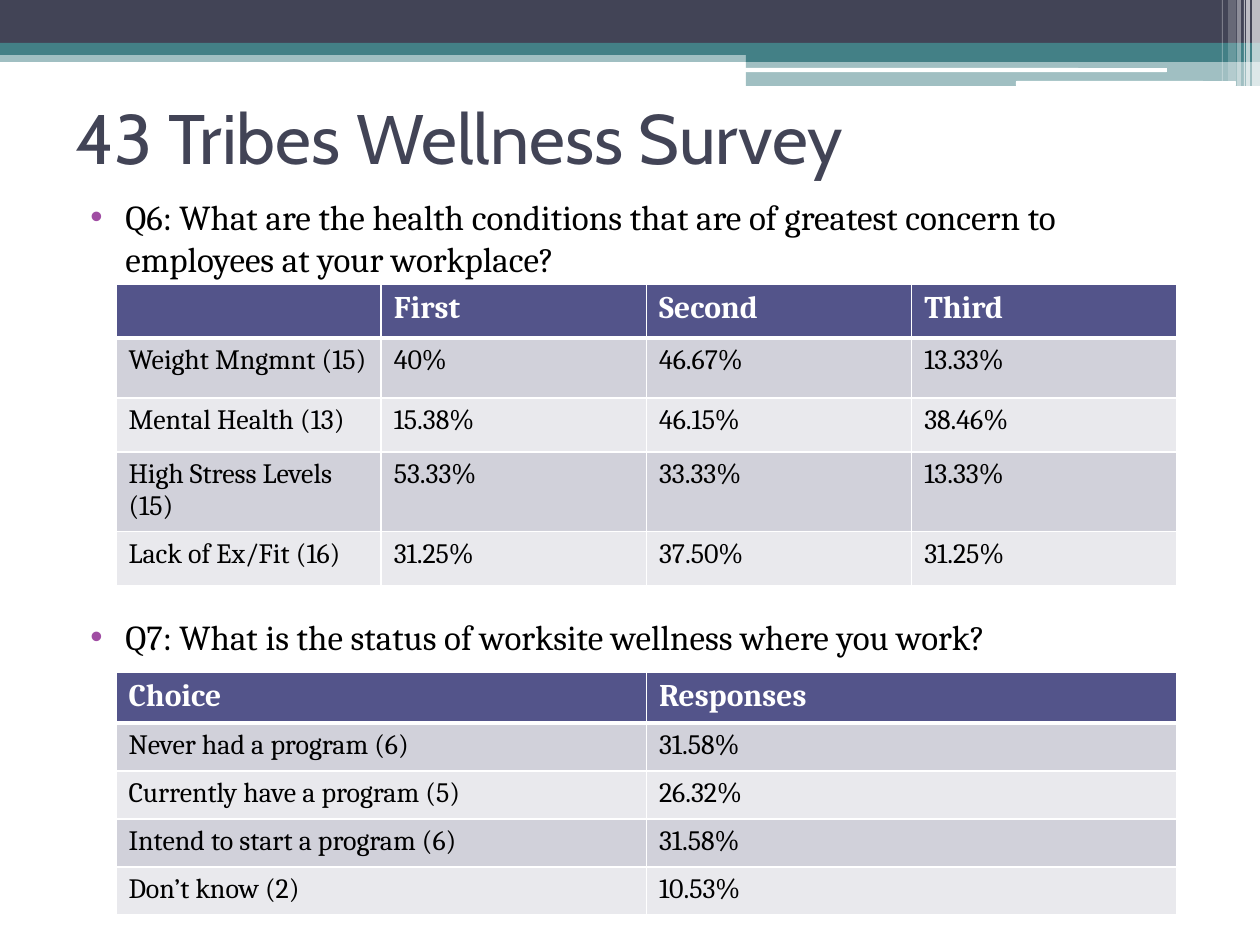
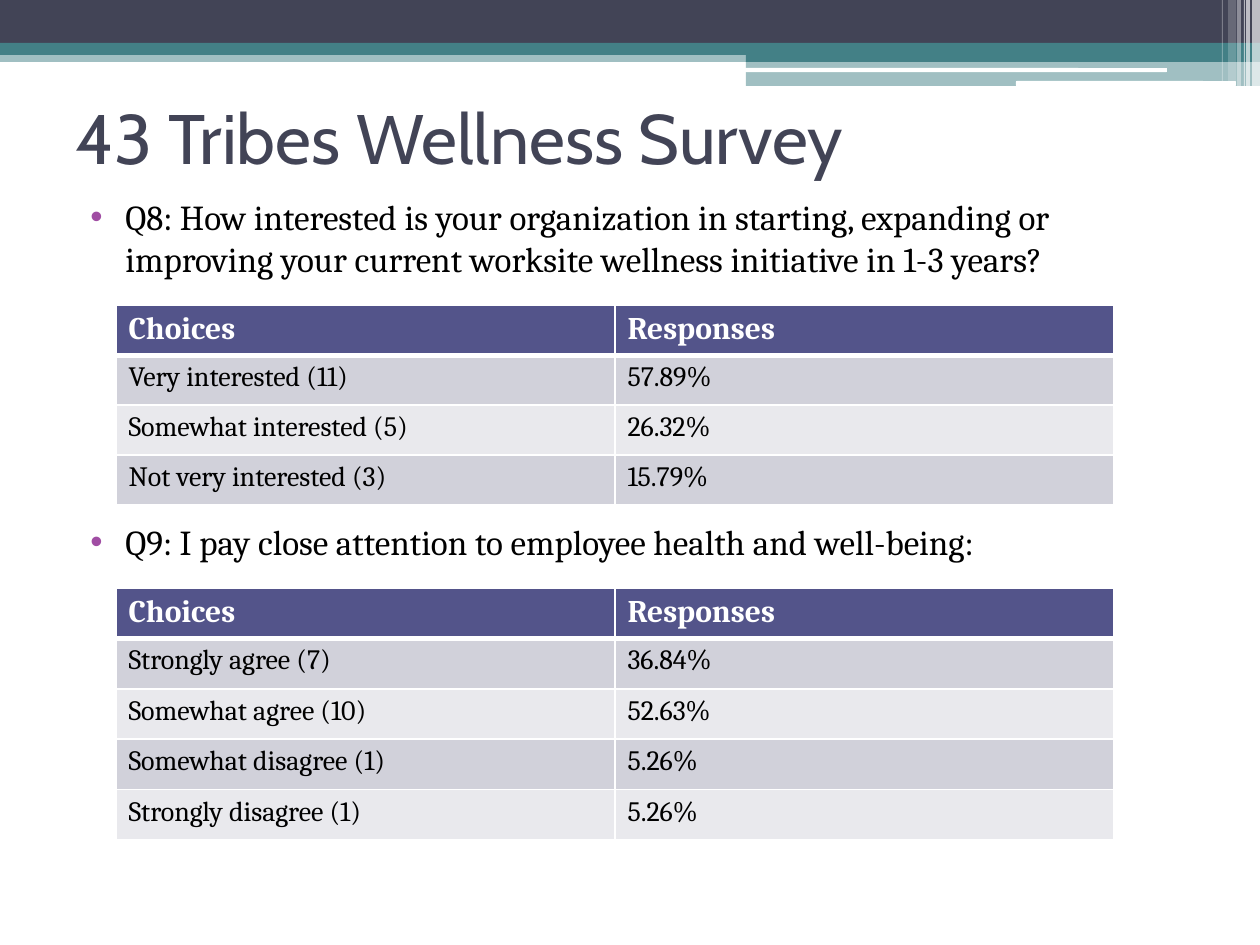
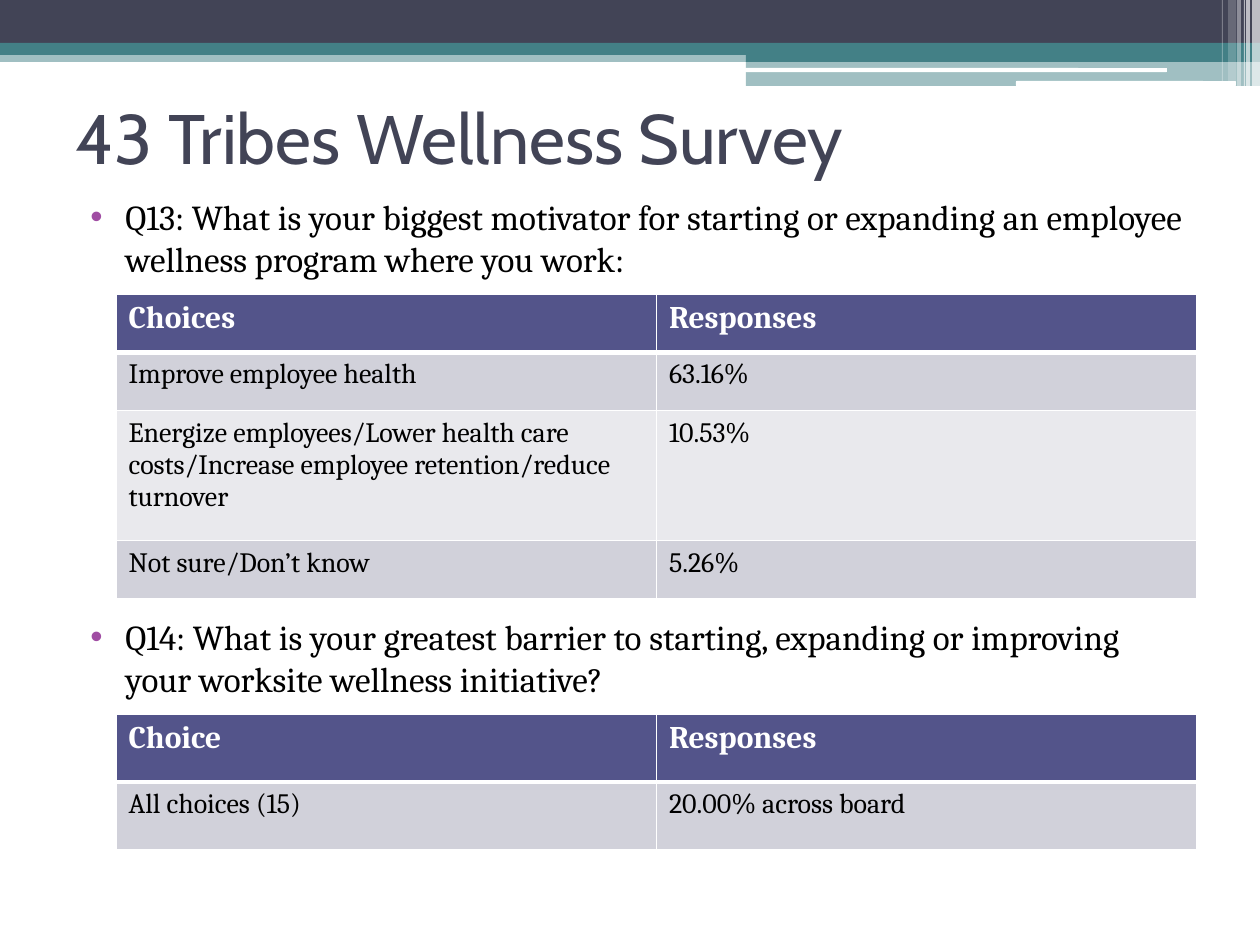
import pptx
import pptx.dml.color
import pptx.enum.shapes
import pptx.enum.text
import pptx.oxml
import pptx.oxml.ns
import pptx.util
from dataclasses import dataclass

PX = 914400 / 126
qn = pptx.oxml.ns.qn
SHAPE = pptx.enum.shapes.MSO_SHAPE
ANCHOR = pptx.enum.text.MSO_ANCHOR


@dataclass(frozen=True)
class Theme:
    title_font: str = "Cabin"
    body_font: str = "Cambria"
    title_size: int = 40
    question_size: int = 20
    header_size: int = 18
    cell_size: int = 16
    ink: str = "424456"
    teal: str = "438086"
    bullet: str = "A04DA3"
    header: str = "53548A"
    stripes: tuple = ("D1D1DA", "E9E9ED")
    white: str = "FFFFFF"
    black: str = "000000"


T = Theme()

# Content: "gap" is the space in points above the second question;
# "tall" gives row heights in px, the other rows share what is left
TITLE = "43 Tribes Wellness Survey"
SLIDES = [
    {
        "questions": [
            "Q6: What are the health conditions that are of greatest concern to employees at your workplace?",
            "Q7: What is the status of worksite wellness where you work?",
        ],
        "gap": 192, "body_height": 596, "table_width": 1061,
        "tables": [
            {"top": 284, "height": 299, "tall": {1: 60, 3: 77}, "rows": [
                ("", "First", "Second", "Third"),
                ("Weight Mngmnt (15)", "40%", "46.67%", "13.33%"),
                ("Mental Health (13)", "15.38%", "46.15%", "38.46%"),
                ("High Stress Levels (15)", "53.33%", "33.33%", "13.33%"),
                ("Lack of Ex/Fit (16)", "31.25%", "37.50%", "31.25%"),
            ]},
            {"top": 672, "height": 243, "tall": {0: 51}, "rows": [
                ("Choice", "Responses"),
                ("Never had a program (6)", "31.58%"),
                ("Currently have a program (5)", "26.32%"),
                ("Intend to start a program (6)", "31.58%"),
                ("Don’t know (2)", "10.53%"),
            ]},
        ],
    },
    {
        "questions": [
            "Q8: How interested is your organization in starting, expanding or improving your current worksite wellness initiative in 1-3 years?",
            "Q9: I pay close attention to employee health and well-being:",
        ],
        "gap": 138, "body_height": 717, "table_width": 998,
        "tables": [
            {"top": 305, "height": 199, "tall": {}, "rows": [
                ("Choices", "Responses"),
                ("Very interested (11)", "57.89%"),
                ("Somewhat interested (5)", "26.32%"),
                ("Not very interested (3)", "15.79%"),
            ]},
            {"top": 588, "height": 252, "tall": {}, "rows": [
                ("Choices", "Responses"),
                ("Strongly agree (7)", "36.84%"),
                ("Somewhat agree (10)", "52.63%"),
                ("Somewhat disagree (1)", "5.26%"),
                ("Strongly disagree (1)", "5.26%"),
            ]},
        ],
    },
    {
        "questions": [
            "Q13: What is your biggest motivator for starting or expanding an employee wellness program where you work:",
            "Q14: What is your greatest barrier to starting, expanding or improving your worksite wellness initiative?",
        ],
        "gap": 192, "body_height": 596, "table_width": 1081,
        "tables": [
            {"top": 294, "height": 305, "tall": {2: 130}, "rows": [
                ("Choices", "Responses"),
                ("Improve employee health", "63.16%"),
                ("Energize employees/Lower health care costs/Increase employee retention/reduce turnover", "10.53%"),
                ("Not sure/Don’t know", "5.26%"),
            ]},
            {"top": 714, "height": 136, "tall": {}, "rows": [
                ("Choice", "Responses"),
                ("All choices (15)", "20.00% across board"),
            ]},
        ],
    },
]

# Header bands: left, top, width, height, colour, opacity %, preset
BANDS = [
    (0, 50, 1260, 12, T.teal, 50, SHAPE.RECTANGLE),
    (0, 0, 1260, 43, T.ink, 100, SHAPE.RECTANGLE),
    (0, 43, 1260, 12, T.teal, 100, SHAPE.RECTANGLE),
    (746, 49, 514, 13, T.teal, 100, SHAPE.RECTANGLE),
    (746, 61, 514, 25, T.teal, 50, SHAPE.RECTANGLE),
    (745, 68, 422, 4, T.white, 100, SHAPE.ROUNDED_RECTANGLE),
    (1016, 81, 220, 5, T.white, 100, SHAPE.ROUNDED_RECTANGLE),
]
# Vertical glints at the right edge: left, width, height, opacity %
GLINTS = [(1252, 8, 86, 65), (1246, 4, 86, 65), (1244, 1, 86, 60),
          (1237, 4, 86, 40), (1228, 8, 81, 20), (1222, 1, 81, 30)]
BANDS += [(x, 0, w, h, T.white, a, SHAPE.RECTANGLE) for x, w, h, a in GLINTS]

TITLE_BOX = (63, 63, 1134, 147)
BODY_LEFT, BODY_TOP, BODY_WIDTH = 63, 189, 1134
TABLE_LEFT = 116
BULLET_INDENT, BULLET_HANG = 50, 35
SPACE_BEFORE = 3


def px(*values):
    return [pptx.util.Emu(round(v * PX)) for v in values]


def rgb(value):
    return pptx.dml.color.RGBColor.from_string(value)


def set_font(p, name, size, color, bold=False):
    p.font.name = name
    p.font.size = pptx.util.Pt(size)
    p.font.color.rgb = rgb(color)
    p.font.bold = bold


def add_child(parent, tag, **attributes):
    child = pptx.oxml.parse_xml(f"<a:{tag} {pptx.oxml.ns.nsdecls('a')}/>")
    for key, value in attributes.items():
        child.set(key, str(value))
    parent.append(child)
    return child


# Shared bands live on the layout
def add_bands(s, layout):
    for ph in list(layout.placeholders):
        if ph.placeholder_format.type != pptx.enum.shapes.PP_PLACEHOLDER.TITLE:
            ph.element.getparent().remove(ph.element)
    bands = []
    for x, y, w, h, color, opacity, preset in BANDS:
        band = s.shapes.add_shape(preset, *px(x, y, w, h))
        band.shadow.inherit = False
        band.fill.solid()
        band.fill.fore_color.rgb = rgb(color)
        band.line.fill.background()
        if opacity < 100:
            fill = next(band.element.iter(qn("a:srgbClr")))
            add_child(fill, "alpha", val=opacity * 1000)
        bands.append(band)
    for band in bands:
        layout.shapes.element.append(band.element)


def add_title(s):
    title = s.shapes.title
    title.left, title.top, title.width, title.height = px(*TITLE_BOX)
    tf = title.text_frame
    tf.text = TITLE
    tf.auto_size = pptx.enum.text.MSO_AUTO_SIZE.NONE
    tf.vertical_anchor = ANCHOR.MIDDLE
    p = tf.paragraphs[0]
    p.alignment = pptx.enum.text.PP_ALIGN.LEFT
    set_font(p, T.title_font, T.title_size, T.ink)


def add_questions(s, questions, gap, height):
    box = s.shapes.add_textbox(*px(BODY_LEFT, BODY_TOP, BODY_WIDTH, height))
    tf = box.text_frame
    tf.word_wrap = True
    indent, hang = px(BULLET_INDENT, BULLET_HANG)
    for i, question in enumerate(questions):
        p = tf.add_paragraph() if i else tf.paragraphs[0]
        p.text = question
        p.space_before = pptx.util.Pt(gap if i else SPACE_BEFORE)
        pPr = p._p.get_or_add_pPr()
        pPr.set("marL", str(indent))
        pPr.set("indent", str(-hang))
        add_child(add_child(pPr, "buClr"), "srgbClr", val=T.bullet)
        add_child(pPr, "buFont", typeface="Arial")
        add_child(pPr, "buChar", char="•")
        set_font(p, T.body_font, T.question_size, T.black)


def set_borders(cell, row):
    widths = {"lnL": 1, "lnR": 1, "lnT": 3 if row == 1 else 1, "lnB": 3 if row == 0 else 1}
    tcPr = cell._tc.get_or_add_tcPr()
    for tag, width in widths.items():
        line = add_child(tcPr, tag, w=pptx.util.Pt(width))
        add_child(add_child(line, "solidFill"), "srgbClr", val=T.white)


def add_survey_table(s, width, top, height, tall, rows):
    n_rows, n_cols = len(rows), len(rows[0])
    shared = (height - sum(tall.values())) / (n_rows - len(tall))
    table = s.shapes.add_table(n_rows, n_cols, *px(TABLE_LEFT, top, width, height)).table
    for column in table.columns:
        column.width = px(width / n_cols)[0]
    for r, values in enumerate(rows):
        table.rows[r].height = px(tall.get(r, shared))[0]
        for c, value in enumerate(values):
            cell = table.cell(r, c)
            set_borders(cell, r)
            cell.fill.solid()
            cell.fill.fore_color.rgb = rgb(T.stripes[(r - 1) % 2] if r else T.header)
            cell.text = value
            p = cell.text_frame.paragraphs[0]
            if r:
                set_font(p, T.body_font, T.cell_size, T.black)
            else:
                set_font(p, T.body_font, T.header_size, T.white, bold=True)


def main():
    prs = pptx.Presentation()
    prs.slide_width, prs.slide_height = px(1260, 945)
    layout = prs.slide_layouts[5]
    for i, content in enumerate(SLIDES):
        s = prs.slides.add_slide(layout)
        if i == 0:
            add_bands(s, layout)
        add_title(s)
        add_questions(s, content["questions"], content["gap"], content["body_height"])
        for table in content["tables"]:
            add_survey_table(s, content["table_width"], **table)
    prs.save("out.pptx")


if __name__ == "__main__":
    main()
